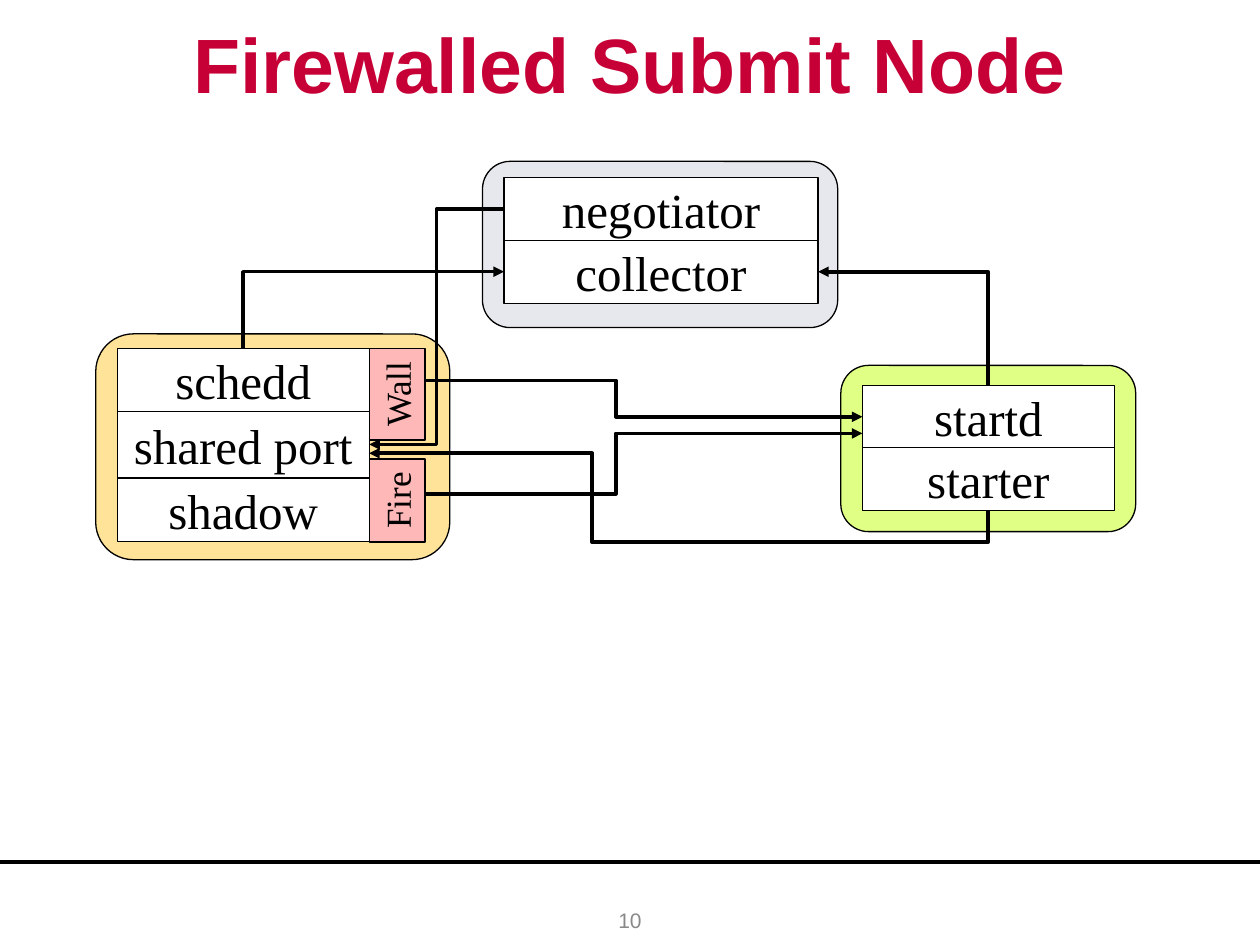
from dataclasses import dataclass

from lxml import etree
from pptx import Presentation
from pptx.dml.color import RGBColor
from pptx.enum.shapes import MSO_CONNECTOR, MSO_SHAPE
from pptx.enum.text import MSO_ANCHOR, PP_ALIGN
from pptx.oxml.ns import qn
from pptx.util import Pt

RECTANGLE = MSO_SHAPE.RECTANGLE
ROUNDED = MSO_SHAPE.ROUNDED_RECTANGLE
STRAIGHT, ELBOW = MSO_CONNECTOR.STRAIGHT, MSO_CONNECTOR.ELBOW
MIDDLE, TOP = MSO_ANCHOR.MIDDLE, MSO_ANCHOR.TOP
CENTER = PP_ALIGN.CENTER
SERIF, SANS = "Times New Roman", "Arial"
BLACK, WHITE, PINK = "000000", "FFFFFF", "FFB8B8"


@dataclass
class Box:
    left: float
    top: float
    width: float
    height: float


@dataclass
class Node:
    """A rounded panel holding a stack of daemon rows."""
    panel: Box
    fill: str
    left: float
    top: float
    width: float
    rows: list[tuple[str, float]]


@dataclass
class Barrier:
    label: str
    frame: Box


@dataclass
class Arrow:
    start: tuple[float, float]
    end: tuple[float, float]
    preset: str
    rotation: int = 0
    flip_h: bool = False
    flip_v: bool = False
    adjustments: tuple[float, ...] = ()


NODES = [
    Node(Box(480.5, 208.8, 168.5, 95), "E0FF85", 492.8, 220.3, 144,
         [("startd", 35.6), ("starter", 35.8)]),
    Node(Box(54.7, 190.8, 202.3, 129), "FFE399", 67, 199.3, 144,
         [("schedd", 35.8), ("shared port", 38), ("shadow", 36.4)]),
    Node(Box(275.7, 92.2, 203, 95), "E7E8ED", 288, 101.3, 179.5,
         [("negotiator", 36), ("collector", 36)]),
]
BARRIERS = [
    Barrier("Fire", Box(203.3, 270.2, 47.4, 31.6)),
    Barrier("Wall", Box(200.8, 209.5, 52.4, 31.6)),
]
ARROWS = [
    # startd and schedd report to the collector
    Arrow((564.7, 220.3), (467.5, 155.3), "bentConnector2", 270, flip_v=True),
    Arrow((139, 199.3), (288, 155.3), "bentConnector2", 90, True, True),
    # negotiator and starter reach the shared port
    Arrow((288, 119.3), (211, 254), "bentConnector3", 180, flip_v=True,
          adjustments=(0.5,)),
    Arrow((564.7, 291.7), (211, 259), "bentConnector4", 90, flip_h=True,
          adjustments=(-0.55, 0.64)),
    # shadow and schedd contact startd
    Arrow((211, 282.3), (492.8, 247.7), "bentConnector3", flip_v=True,
          adjustments=(0.5,)),
    Arrow((211, 217.4), (492.8, 238.2), "bentConnector3",
          adjustments=(0.5,)),
]


def color(value: str) -> RGBColor:
    return RGBColor.from_string(value)


def place(shape, box: Box) -> None:
    shape.left, shape.top = Pt(box.left), Pt(box.top)
    shape.width, shape.height = Pt(box.width), Pt(box.height)


def write(shape, text: str, size: float, font: str, font_color: str,
          bold: bool = False, anchor=MIDDLE) -> None:
    frame = shape.text_frame
    frame.vertical_anchor = anchor
    paragraph = frame.paragraphs[0]
    paragraph.alignment = CENTER
    run = paragraph.add_run()
    run.text = text
    run.font.size, run.font.name, run.font.bold = Pt(size), font, bold
    run.font.color.rgb = color(font_color)


def add_box(slide, kind, box: Box, fill: str):
    shape = slide.shapes.add_shape(kind, 0, 0, 0, 0)
    place(shape, box)
    shape.shadow.inherit = False
    shape.fill.solid()
    shape.fill.fore_color.rgb = color(fill)
    shape.line.color.rgb = color(BLACK)
    shape.line.width = Pt(0.75)
    shape.text_frame.word_wrap = False
    return shape


def add_rows(slide, node: Node) -> None:
    top = node.top
    for label, height in node.rows:
        row = add_box(slide, RECTANGLE, Box(node.left, top, node.width, height), WHITE)
        write(row, label, 28, SERIF, BLACK)
        top += height


def add_line(slide, kind, start: tuple[float, float], end: tuple[float, float],
             width: float):
    connector = slide.shapes.add_connector(kind, *map(Pt, start + end))
    connector.line.color.rgb = color(BLACK)
    connector.line.width = Pt(width)
    etree.SubElement(connector._element.spPr, qn("a:effectLst"))
    return connector


def add_arrow(slide, arrow: Arrow) -> None:
    connector = add_line(slide, ELBOW, arrow.start, arrow.end, 2)
    (x1, y1), (x2, y2) = arrow.start, arrow.end
    width, height = abs(x2 - x1), abs(y2 - y1)
    if arrow.rotation in (90, 270):
        width, height = height, width
    # The frame is centred between both ends, before rotation
    place(connector, Box((x1 + x2 - width) / 2, (y1 + y2 - height) / 2, width, height))
    properties = connector._element.spPr
    transform = properties.find(qn("a:xfrm"))
    transform.set("rot", str(arrow.rotation * 60000))
    transform.set("flipH", str(int(arrow.flip_h)))
    transform.set("flipV", str(int(arrow.flip_v)))
    geometry = properties.find(qn("a:prstGeom"))
    geometry.set("prst", arrow.preset)
    guides = geometry.find(qn("a:avLst"))
    for number, value in enumerate(arrow.adjustments, 1):
        etree.SubElement(guides, qn("a:gd"), name=f"adj{number}",
                         fmla=f"val {round(value * 100000)}")
    etree.SubElement(properties.find(qn("a:ln")), qn("a:tailEnd"), type="triangle")


def main() -> None:
    presentation = Presentation()
    presentation.slide_width, presentation.slide_height = Pt(720), Pt(540)
    slide = presentation.slides.add_slide(presentation.slide_layouts[5])

    # Title, footer rule and page number
    title = slide.shapes.title
    place(title, Box(0, 0, 720, 72))
    write(title, "Firewalled Submit Node", 44, SANS, "C60036", bold=True)
    add_line(slide, STRAIGHT, (0, 492.5), (720, 492.5), 2.25)
    page_number = slide.shapes.add_textbox(Pt(276), Pt(511.2), Pt(168), Pt(28.8))
    page_number.text_frame.word_wrap = True
    write(page_number, "10", 12, SANS, "898989")

    # Machines and their daemons
    for node in NODES:
        add_box(slide, ROUNDED, node.panel, node.fill)
    for node in NODES:
        add_rows(slide, node)

    # Connections, then the firewall over them
    for arrow in ARROWS:
        add_arrow(slide, arrow)
    for barrier in BARRIERS:
        block = add_box(slide, RECTANGLE, barrier.frame, PINK)
        block.rotation = 270
        write(block, barrier.label, 20, SERIF, BLACK, anchor=TOP)

    presentation.save("out.pptx")


if __name__ == "__main__":
    main()
